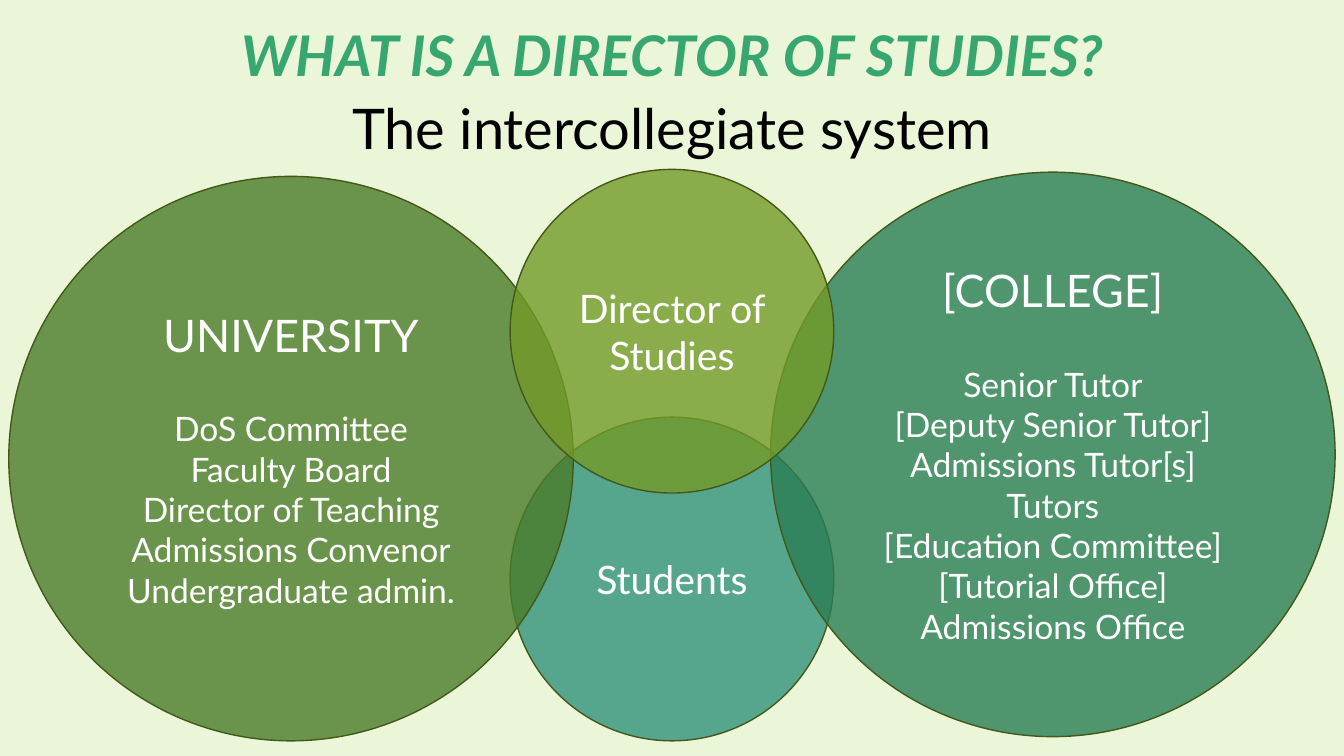
from dataclasses import dataclass

from lxml.etree import SubElement
from pptx import Presentation
from pptx.dml.color import RGBColor
from pptx.enum.shapes import MSO_SHAPE
from pptx.enum.text import MSO_ANCHOR, MSO_AUTO_SIZE, PP_ALIGN
from pptx.oxml.ns import qn
from pptx.util import Pt


@dataclass(frozen=True)
class Theme:
    font: str = "Lato"
    background: str = "EBF5D7"
    title: str = "37A76F"
    subtitle: str = "000000"
    circle_text: str = "FFFFFF"
    outline: str = "435919"
    students: str = "31937B"
    college: str = "297D53"
    university: str = "4A7C29"
    director: str = "739A28"
    opacity: int = 80
    title_size: int = 40
    heading_size: int = 32
    label_size: int = 28
    list_size: int = 24
    list_gap: float = 33.6


class SlideBuilder:
    def __init__(self, slide, theme):
        self.slide = slide
        self.theme = theme
        slide.background.fill.solid()
        slide.background.fill.fore_color.rgb = RGBColor.from_string(theme.background)

    def add_text(self, paragraph, text, size, color, bold=False, italic=False):
        paragraph.alignment = PP_ALIGN.CENTER
        run = paragraph.add_run()
        run.text = text
        font = run.font
        font.name, font.size = self.theme.font, Pt(size)
        font.bold, font.italic = bold, italic
        font.color.rgb = RGBColor.from_string(color)

    def banner(self, placeholder, text, top, height, color, anchor, line_spacing, emphasis=False):
        """Stretch a placeholder over the slide's width and fill in its line."""
        placeholder.left, placeholder.top = Pt(0), Pt(top)
        placeholder.width, placeholder.height = Pt(SLIDE_WIDTH), Pt(height)
        frame = placeholder.text_frame
        frame.auto_size = MSO_AUTO_SIZE.NONE
        frame.word_wrap = True
        frame.vertical_anchor = anchor
        paragraph = frame.paragraphs[0]
        paragraph.space_before = Pt(0)
        paragraph.line_spacing = line_spacing
        self.add_text(paragraph, text, self.theme.title_size, color, emphasis, emphasis)

    def circle(self, left, top, diameter, color, heading, size, members=()):
        """Draw a translucent circle with a heading and an optional list below it."""
        theme = self.theme
        shape = self.slide.shapes.add_shape(
            MSO_SHAPE.OVAL, Pt(left), Pt(top), Pt(diameter), Pt(diameter)
        )
        shape.shadow.inherit = False
        shape.fill.solid()
        shape.fill.fore_color.rgb = RGBColor.from_string(color)
        fill_color = shape.element.spPr.find(qn("a:solidFill")).find(qn("a:srgbClr"))
        SubElement(fill_color, qn("a:alpha")).set("val", str(theme.opacity * 1000))
        shape.line.color.rgb = RGBColor.from_string(theme.outline)
        shape.line.width = Pt(1)
        frame = shape.text_frame
        frame.word_wrap = True
        frame.vertical_anchor = MSO_ANCHOR.MIDDLE
        self.add_text(frame.paragraphs[0], heading, size, theme.circle_text)
        for index, member in enumerate(members):
            paragraph = frame.add_paragraph()
            paragraph.space_before = Pt(0 if index else theme.list_gap)
            self.add_text(paragraph, member, theme.list_size, theme.circle_text)


SLIDE_WIDTH, SLIDE_HEIGHT = 960, 540
LARGE, SMALL = 403.2, 231.2
SIDE_MARGIN = 6.3
CIRCLE_BOTTOM = 529.2

UNIVERSITY_MEMBERS = (
    "DoS Committee",
    "Faculty Board",
    "Director of Teaching",
    "Admissions Convenor",
    "Undergraduate admin.",
)
COLLEGE_MEMBERS = (
    "Senior Tutor",
    "[Deputy Senior Tutor]",
    "Admissions Tutor[s]",
    "Tutors",
    "[Education Committee]",
    "[Tutorial Office]",
    "Admissions Office",
)


def main():
    presentation = Presentation()
    presentation.slide_width, presentation.slide_height = Pt(SLIDE_WIDTH), Pt(SLIDE_HEIGHT)
    slide = presentation.slides.add_slide(presentation.slide_layouts[0])
    theme = Theme()
    builder = SlideBuilder(slide, theme)
    title, subtitle = slide.placeholders

    builder.banner(title, "WHAT IS A DIRECTOR OF STUDIES?", 10.8, 68.4,
                   theme.title, MSO_ANCHOR.TOP, 1.0, emphasis=True)
    builder.banner(subtitle, "The intercollegiate system", 63.4, 61.2,
                   theme.subtitle, MSO_ANCHOR.MIDDLE, 0.9)

    middle_left = (SLIDE_WIDTH - SMALL) / 2
    college_left = SLIDE_WIDTH - SIDE_MARGIN - LARGE
    builder.circle(middle_left, CIRCLE_BOTTOM - SMALL, SMALL,
                   theme.students, "Students", theme.label_size)
    builder.circle(college_left, 123, LARGE,
                   theme.college, "[COLLEGE]", theme.heading_size, COLLEGE_MEMBERS)
    builder.circle(SIDE_MARGIN, CIRCLE_BOTTOM - LARGE, LARGE,
                   theme.university, "UNIVERSITY", theme.heading_size, UNIVERSITY_MEMBERS)
    builder.circle(middle_left, 121, SMALL,
                   theme.director, "Director of Studies", theme.label_size)

    presentation.save("out.pptx")


if __name__ == "__main__":
    main()
